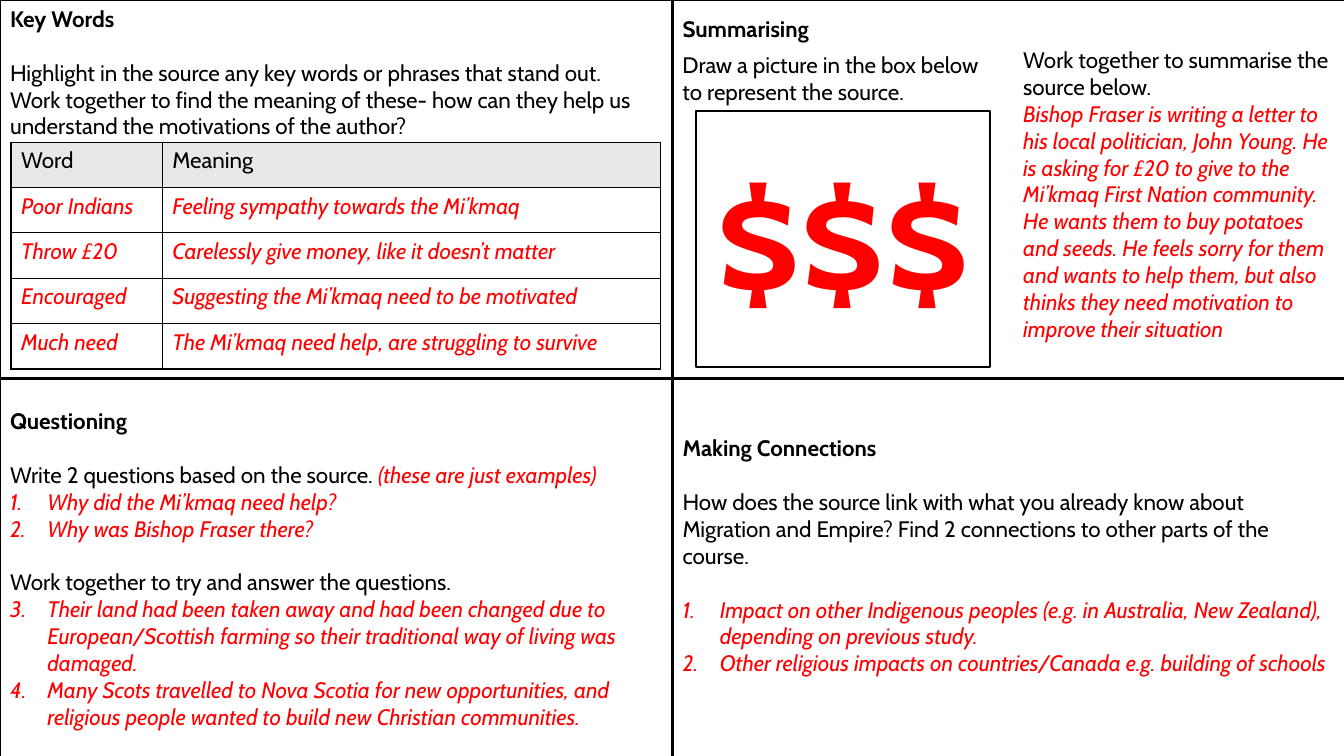
from dataclasses import dataclass
from typing import Any

from lxml.etree import SubElement
from pptx import Presentation
from pptx.dml.color import RGBColor
from pptx.enum.shapes import MSO_SHAPE
from pptx.enum.text import MSO_ANCHOR, MSO_AUTO_SIZE, PP_ALIGN
from pptx.oxml.ns import qn
from pptx.util import Inches, Pt

COLORS = {"black": "000000", "red": "FF0000", "white": "FFFFFF", "grey": "E8E8E8"}
FORMATS: dict[str, dict[str, Any]] = {
    "heading": {"size": Pt(16), "bold": True, "italic": False},
    "plain": {"size": Pt(16), "bold": False, "italic": False},
    "answer": {"size": Pt(16), "bold": False, "italic": True},
    "symbol": {"size": Pt(115), "bold": True, "italic": False},
}
INKS = {"heading": "black", "plain": "black", "answer": "red", "symbol": "red"}
LINE_GAP = 19.2
INDENT = 0.37
HALF_W, HALF_H = 6.67, 3.75


@dataclass
class Para:
    text: str
    style: str = "plain"
    before: float = 0
    number: int = 0
    extra: str = ""
    align: PP_ALIGN = PP_ALIGN.LEFT


@dataclass
class Panel:
    idx: int
    col: int
    row: int
    top: float
    paras: list[Para]


PANELS = [
    Panel(0, 1, 0, 0.15, [Para("Summarising", "heading")]),
    Panel(1, 0, 0, 0.05, [
        Para("Key Words", "heading"),
        Para("Highlight in the source any key words or phrases that stand out.", before=LINE_GAP),
        Para("Work together to find the meaning of these- how can they help us "
             "understand the motivations of the author?"),
    ]),
    Panel(2, 0, 1, 0.28, [
        Para("Questioning", "heading"),
        Para("Write 2 questions based on the source. ", before=LINE_GAP,
             extra="(these are just examples)"),
        Para("Why did the Mi’kmaq need help?", "answer", number=1),
        Para("Why was Bishop Fraser there?", "answer", number=1),
        Para("Work together to try and answer the questions.", before=LINE_GAP),
        Para("Their land had been taken away and had been changed due to European/Scottish "
             "farming so their traditional way of living was damaged.", "answer", number=3),
        Para("Many Scots travelled to Nova Scotia for new opportunities, and religious "
             "people wanted to build new Christian communities.", "answer", number=3),
    ]),
    Panel(4, 1, 1, 0.55, [
        Para("Making Connections", "heading"),
        Para("How does the source link with what you already know about Migration and "
             "Empire? Find 2 connections to other parts of the course.", before=LINE_GAP),
        Para("Impact on other Indigenous peoples (e.g. in Australia, New Zealand), "
             "depending on previous study.", "answer", LINE_GAP, 1),
        Para("Other religious impacts on countries/Canada e.g. building of schools",
             "answer", number=1),
    ]),
]
WORDS = [
    ("Word", "Meaning"),
    ("Poor Indians", "Feeling sympathy towards the Mi’kmaq"),
    ("Throw £20", "Carelessly give money, like it doesn’t matter"),
    ("Encouraged", "Suggesting the Mi’kmaq need to be motivated"),
    ("Much need", "The Mi’kmaq need help, are struggling to survive"),
]
SUMMARY = [
    Para("Work together to summarise the source below."),
    Para("Bishop Fraser is writing a letter to his local politician, John Young. He is "
         "asking for £20 to give to the Mi’kmaq First Nation community. He wants them to "
         "buy potatoes and seeds. He feels sorry for them and wants to help them, but also "
         "thinks they need motivation to improve their situation", "answer"),
]


def rgb(name: str) -> RGBColor:
    return RGBColor.from_string(COLORS[name])


def add_run(p, text: str, style: str) -> None:
    r = p.add_run()
    r.text = text
    for key, value in FORMATS[style].items():
        setattr(r.font, key, value)
    r.font.name = "Cabin"
    r.font.color.rgb = rgb(INKS[style])


def write(tf, paras: list[Para]) -> None:
    for i, para in enumerate(paras):
        p = tf.add_paragraph() if i else tf.paragraphs[0]
        formats = {"alignment": para.align, "space_before": Pt(para.before),
                   "space_after": Pt(0), "line_spacing": 1.0}
        for key, value in formats.items():
            setattr(p, key, value)
        add_run(p, para.text, para.style)
        if para.extra:
            add_run(p, para.extra, "answer")
        set_bullet(p, para.number)


def set_bullet(p, number: int) -> None:
    pPr = p._p.get_or_add_pPr()
    indent = Inches(INDENT if number else 0)
    pPr.set("marL", str(indent))
    pPr.set("indent", str(-indent))
    if number:
        SubElement(pPr, qn("a:buFont"), typeface="Cabin")
        SubElement(pPr, qn("a:buAutoNum"), type="arabicPeriod", startAt=str(number))
    else:
        SubElement(pPr, qn("a:buNone"))


def fill_frame(sp, paras: list[Para], top: float = 0.05,
               anchor: MSO_ANCHOR = MSO_ANCHOR.TOP) -> None:
    tf = sp.text_frame
    formats = {"word_wrap": True, "auto_size": MSO_AUTO_SIZE.NONE, "vertical_anchor": anchor,
               "margin_left": Inches(0.1), "margin_right": Inches(0.1),
               "margin_top": Inches(top), "margin_bottom": Inches(0.05)}
    for key, value in formats.items():
        setattr(tf, key, value)
    write(tf, paras)


def paint(sp, outlined: bool = True) -> None:
    sp.fill.solid()
    sp.fill.fore_color.rgb = rgb("white")
    if outlined:
        sp.line.color.rgb = rgb("black")
        sp.line.width = Pt(1.5)
    else:
        sp.line.fill.background()


def add_panel(s, panel: Panel) -> None:
    sp = next(ph for ph in s.placeholders if ph.placeholder_format.idx == panel.idx)
    box = {"left": panel.col * HALF_W, "top": panel.row * (HALF_H + 0.01),
           "width": HALF_W, "height": HALF_H}
    for key, value in box.items():
        setattr(sp, key, Inches(value))
    paint(sp)
    fill_frame(sp, panel.paras, panel.top)


def add_box(s, box: tuple[float, float, float, float], paras: list[Para],
            outlined: bool = False, anchor: MSO_ANCHOR = MSO_ANCHOR.TOP) -> None:
    sp = s.shapes.add_shape(MSO_SHAPE.RECTANGLE, *map(Inches, box))
    sp.shadow.inherit = False
    paint(sp, outlined)
    fill_frame(sp, paras, anchor=anchor)


def add_border(cell) -> None:
    tcPr = cell._tc.get_or_add_tcPr()
    for side in ("lnL", "lnR", "lnT", "lnB"):
        ln = SubElement(tcPr, qn(f"a:{side}"), w=str(Pt(1)))
        SubElement(SubElement(ln, qn("a:solidFill")), qn("a:srgbClr"), val=COLORS["black"])


def add_words(s) -> None:
    table = s.shapes.add_table(len(WORDS), 2, Inches(0.11), Inches(1.41),
                               Inches(6.44), Inches(2.25)).table
    for column, width in zip(table.columns, (1.5, 4.94)):
        column.width = Inches(width)
    for i, row in enumerate(WORDS):
        for j, text in enumerate(row):
            cell = table.cell(i, j)
            add_border(cell)
            cell.fill.solid()
            cell.fill.fore_color.rgb = rgb("white" if i else "grey")
            write(cell.text_frame, [Para(text, "answer" if i else "plain")])


def main() -> None:
    prs = Presentation()
    prs.slide_width, prs.slide_height = Inches(13.33), Inches(7.5)
    s = prs.slides.add_slide(prs.slide_layouts[4])
    for panel in PANELS:
        add_panel(s, panel)
    for ph in list(s.placeholders):
        if not ph.text_frame.text:
            ph.element.getparent().remove(ph.element)
    add_words(s)
    prompt = s.shapes.add_textbox(*map(Inches, (6.67, 0.46, 3.25, 0.64)))
    fill_frame(prompt, [Para("Draw a picture in the box below to represent the source.")])
    add_box(s, (10.05, 0.41, 3.25, 3.33), SUMMARY)
    add_box(s, (6.9, 1.1, 2.92, 2.54), [Para("$$$", "symbol", align=PP_ALIGN.CENTER)],
            True, MSO_ANCHOR.MIDDLE)
    prs.save("out.pptx")


if __name__ == "__main__":
    main()
